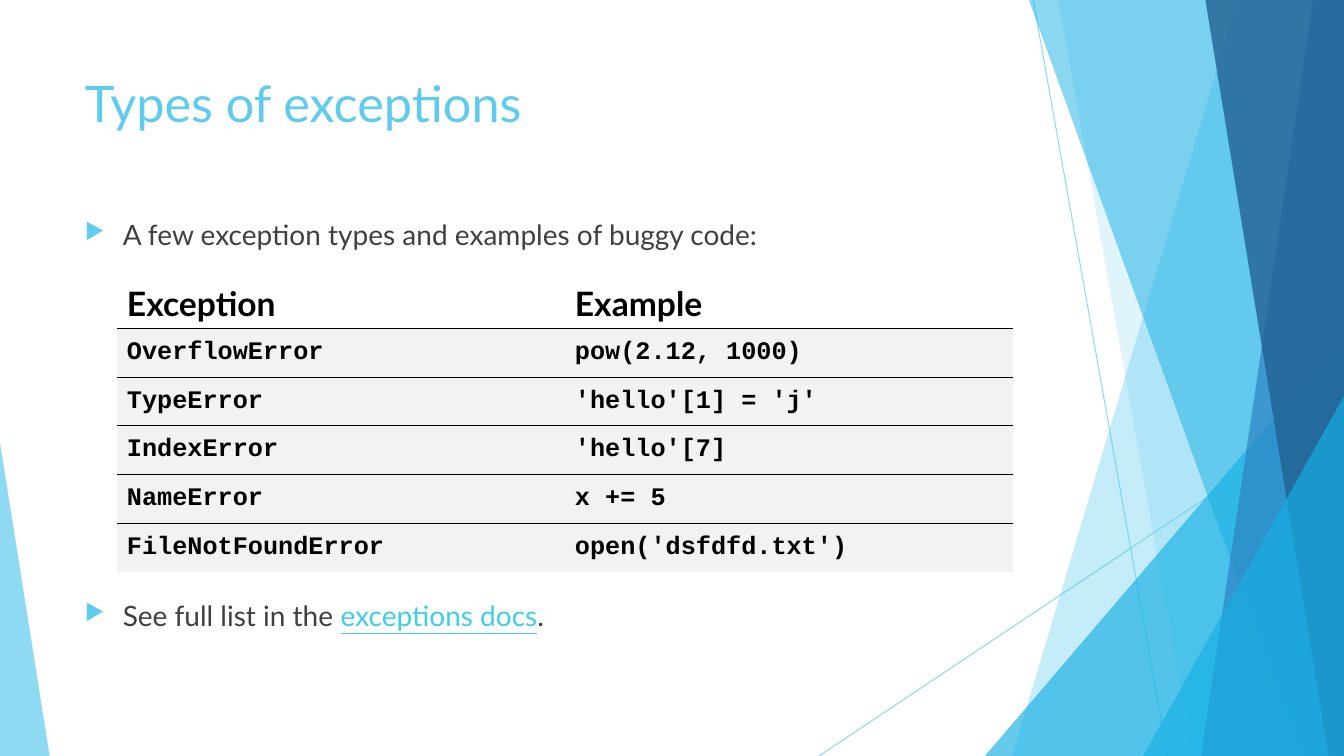
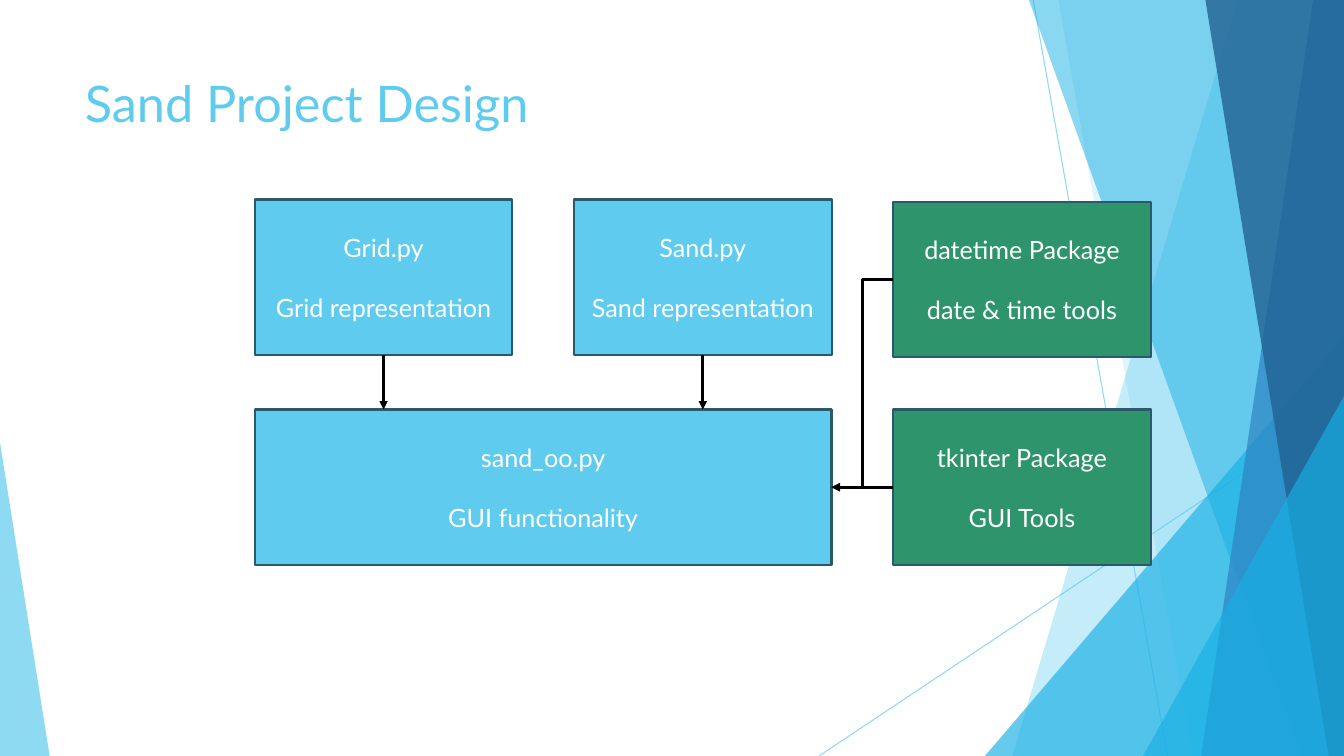
from lxml import etree
from pptx import Presentation
from pptx import util as u
from pptx.dml.color import RGBColor
from pptx.enum import shapes, text
from pptx.oxml import parse_xml
from pptx.oxml.ns import nsdecls, qn

SKY = RGBColor(0x5F, 0xCB, 0xEF)
CYAN = RGBColor(0x17, 0xB0, 0xE4)
BLUE = RGBColor(0x2E, 0x83, 0xC3)
NAVY = RGBColor(0x22, 0x62, 0x92)
GREEN = RGBColor(0x2E, 0x94, 0x6B)
OUTLINE = RGBColor(0x2A, 0x59, 0x69)
LINK = RGBColor(0x3F, 0xCD, 0xE7)
GRAY = RGBColor(0x40, 0x40, 0x40)
PALE = RGBColor(0xF2, 0xF2, 0xF2)
BLACK = RGBColor(0, 0, 0)
WHITE = RGBColor(0xFF, 0xFF, 0xFF)

FONT = "Lato"
CODE_FONT = "Courier New"
WIDTH, HEIGHT = 960, 540
PLAIN_TABLE = "{2D5ABB26-0587-4C30-8999-92F81FD0307C}"

BOX_WIDTH, BOX_HEIGHT = 184, 111
BOX_LEFT, BOX_PITCH = 182, 228
UPPER_TOP, PACKAGE_TOP, LOWER_TOP = 142.5, 144, 292.5

EXCEPTIONS = [
    ("Exception", "Example"),
    ("OverflowError", "pow(2.12, 1000)"),
    ("TypeError", "'hello'[1] = 'j'"),
    ("IndexError", "'hello'[7]"),
    ("NameError", "x += 5"),
    ("FileNotFoundError", "open('dsfdfd.txt')"),
]


def points(*values):
    return [u.Pt(value) for value in values]


def set_opacity(shape, percent):
    color = next(shape.element.iter(qn("a:srgbClr")))
    etree.SubElement(color, qn("a:alpha"), val=str(percent * 1000))


def add_facet(shape, color, opacity):
    shape.shadow.inherit = False
    shape.fill.solid()
    shape.fill.fore_color.rgb = color
    shape.line.fill.background()
    set_opacity(shape, opacity)


def add_band(slide, top_x, bottom_x, color, opacity):
    builder = slide.shapes.build_freeform(*points(top_x, 0), scale=1.0)
    corners = [(WIDTH, 0), (WIDTH, HEIGHT), (bottom_x, HEIGHT)]
    builder.add_line_segments([points(*corner) for corner in corners], close=True)
    add_facet(builder.convert_to_shape(), color, opacity)


def add_triangle(slide, left, top, width, peak, color, opacity):
    shape = slide.shapes.add_shape(
        shapes.MSO_SHAPE.ISOSCELES_TRIANGLE, *points(left, top, width, HEIGHT - top))
    shape.adjustments[0] = peak
    add_facet(shape, color, opacity)


def add_line(slide, start, end, color, width, kind=shapes.MSO_CONNECTOR.STRAIGHT):
    connector = slide.shapes.add_connector(kind, *points(*start, *end))
    connector.line.color.rgb = color
    connector.line.width = u.Pt(width)
    etree.SubElement(connector.element.spPr, qn("a:effectLst"))
    return connector


def draw_background(slide):
    for start, end in [((738, 0), (834, HEIGHT)), ((WIDTH, 290), (585, HEIGHT))]:
        set_opacity(add_line(slide, start, end, SKY, 0.75), 70)
    add_band(slide, 884, 723, SKY, 36)
    add_band(slide, 756, 852, SKY, 20)
    add_triangle(slide, 703.5, 240, 256.5, 1, CYAN, 66)
    add_band(slide, 735, 929.5, CYAN, 50)
    add_band(slide, 938, 858, BLUE, 70)
    add_band(slide, 861, 949, NAVY, 80)
    add_triangle(slide, 816.5, 283, 143.5, 1, CYAN, 66)
    add_triangle(slide, 0, 316, 35.5, 0, SKY, 70)


def move_to_master(slide, master):
    tree = master.shapes.element
    artwork = [shape.element for shape in slide.shapes if not shape.is_placeholder]
    for position, element in enumerate(artwork, 2):
        tree.insert(position, element)
    for number, properties in enumerate(tree.iter(qn("p:cNvPr")), 1):
        properties.set("id", str(number))


def set_text_style(master, style, size, color, indent, space_before, bullet):
    old = next(master.element.iter(qn(style))).find(qn("a:lvl1pPr"))
    new = parse_xml(
        f'<a:lvl1pPr {nsdecls("a")} algn="l" marL="{u.Pt(indent)}" indent="{u.Pt(-indent)}">'
        f'<a:spcBef><a:spcPts val="{space_before * 100}"/></a:spcBef>{bullet}'
        f'<a:defRPr sz="{size * 100}"><a:solidFill><a:srgbClr val="{color}"/></a:solidFill>'
        f'<a:latin typeface="{FONT}"/></a:defRPr></a:lvl1pPr>')
    old.getparent().replace(old, new)


def style_master(master):
    kinds = shapes.PP_PLACEHOLDER
    for kind, top, height in [(kinds.TITLE, 48, 104), (kinds.BODY, 152, 324)]:
        placeholder = master.placeholders.get(kind)
        placeholder.left, placeholder.top, placeholder.width, placeholder.height = points(
            53.5, top, 677, height)
        placeholder.text_frame.vertical_anchor = text.MSO_ANCHOR.TOP
        placeholder.text_frame.auto_size = text.MSO_AUTO_SIZE.NONE
    bullet = (f'<a:buClr><a:srgbClr val="{SKY}"/></a:buClr><a:buSzPct val="80000"/>'
              '<a:buChar char="▶"/>')
    set_text_style(master, "p:titleStyle", 36, SKY, 0, 0, "<a:buNone/>")
    set_text_style(master, "p:bodyStyle", 20, GRAY, 27, 10, bullet)


def add_run(paragraph, words, font=None, size=None, color=None, bold=None):
    run = paragraph.add_run()
    run.text = words
    if font:
        run.font.name = font
    if size:
        run.font.size = u.Pt(size)
    if color is not None:
        run.font.color.rgb = color
    run.font.bold = bold
    return run


def add_titled_slide(presentation, layout_index, title):
    slide = presentation.slides.add_slide(presentation.slide_layouts[layout_index])
    add_run(slide.shapes.title.text_frame.paragraphs[0], title)
    return slide


def set_bottom_border(cell):
    border = parse_xml(
        f'<a:lnB {nsdecls("a")} w="{u.Pt(1)}"><a:solidFill><a:srgbClr val="{BLACK}"/>'
        '</a:solidFill></a:lnB>')
    cell._tc.get_or_add_tcPr().insert(0, border)


def fill_cell(cell, words, is_header, is_last):
    if is_header:
        cell.fill.background()
        add_run(cell.text_frame.paragraphs[0], words, FONT, 24, BLACK, True)
    else:
        cell.fill.solid()
        cell.fill.fore_color.rgb = PALE
        cell.margin_top = cell.margin_bottom = u.Pt(7.2)
        add_run(cell.text_frame.paragraphs[0], words, CODE_FONT, 18, BLACK, True)
    if not is_last:
        set_bottom_border(cell)


def add_code_table(slide, rows, left, top, column_width):
    header_height, row_height = 36, 34.8
    height = header_height + row_height * (len(rows) - 1)
    frame = slide.shapes.add_table(
        len(rows), 2, *points(left, top, 2 * column_width, height))
    next(frame.element.iter(qn("a:tableStyleId"))).text = PLAIN_TABLE
    table = frame.table
    table.first_row = table.horz_banding = False
    for row_index, row in enumerate(rows):
        is_header = row_index == 0
        table.rows[row_index].height = u.Pt(header_height if is_header else row_height)
        for column_index, words in enumerate(row):
            fill_cell(table.cell(row_index, column_index), words,
                      is_header, row_index == len(rows) - 1)


def add_box(slide, column, top, color, name, role, columns=1):
    width = BOX_WIDTH + BOX_PITCH * (columns - 1)
    box = slide.shapes.add_shape(
        shapes.MSO_SHAPE.RECTANGLE,
        *points(BOX_LEFT + BOX_PITCH * column, top, width, BOX_HEIGHT))
    box.shadow.inherit = False
    box.fill.solid()
    box.fill.fore_color.rgb = color
    box.line.color.rgb = OUTLINE
    box.line.width = u.Pt(1.5)
    frame = box.text_frame
    frame.word_wrap = True
    frame.vertical_anchor = text.MSO_ANCHOR.MIDDLE
    for paragraph, words in [(frame.paragraphs[0], name), (frame.add_paragraph(), role)]:
        paragraph.alignment = text.PP_ALIGN.CENTER
        add_run(paragraph, words, FONT, 18, WHITE)
    paragraph.space_before = u.Pt(21.6)
    return box


def add_arrow(slide, start, end, kind=shapes.MSO_CONNECTOR.STRAIGHT):
    arrow = add_line(slide, start, end, BLACK, 2, kind)
    etree.SubElement(arrow.line._get_or_add_ln(), qn("a:tailEnd"), type="triangle")
    return arrow


def build_exceptions(slide):
    frame = slide.placeholders[1].text_frame
    add_run(frame.paragraphs[0], "A few exception types and examples of buggy code:")
    reference = frame.add_paragraph()
    reference.space_before = u.Pt(248)
    add_run(reference, "See full list in the ")
    add_run(reference, "exceptions docs", color=LINK).font.underline = True
    add_run(reference, ".")
    add_code_table(slide, EXCEPTIONS, 83.5, 198.5, 320)


def build_design(slide):
    gui = add_box(slide, 0, LOWER_TOP, SKY, "sand_oo.py", "GUI functionality", columns=2)
    modules_used = [("Grid.py", "Grid representation"), ("Sand.py", "Sand representation")]
    for column, (name, role) in enumerate(modules_used):
        box = add_box(slide, column, UPPER_TOP, SKY, name, role)
        center = BOX_LEFT + BOX_PITCH * column + BOX_WIDTH / 2
        arrow = add_arrow(slide, (center, UPPER_TOP + BOX_HEIGHT), (center, LOWER_TOP))
        arrow.begin_connect(box, 2)
    packages = [
        (PACKAGE_TOP, "datetime Package", "date & time tools", shapes.MSO_CONNECTOR.ELBOW),
        (LOWER_TOP, "tkinter Package", "GUI Tools", shapes.MSO_CONNECTOR.STRAIGHT),
    ]
    package_left = BOX_LEFT + 2 * BOX_PITCH
    gui_right = BOX_LEFT + BOX_PITCH + BOX_WIDTH
    for top, name, role, kind in packages:
        box = add_box(slide, 2, top, GREEN, name, role)
        arrow = add_arrow(slide, (package_left, top + BOX_HEIGHT / 2),
                          (gui_right, LOWER_TOP + BOX_HEIGHT / 2), kind)
        arrow.begin_connect(box, 1)
        arrow.end_connect(gui, 3)


def main():
    presentation = Presentation()
    presentation.slide_width, presentation.slide_height = points(WIDTH, HEIGHT)
    master = presentation.slide_master
    style_master(master)
    exceptions = add_titled_slide(presentation, 1, "Types of exceptions")
    draw_background(exceptions)
    move_to_master(exceptions, master)
    build_exceptions(exceptions)
    build_design(add_titled_slide(presentation, 5, "Sand Project Design"))
    presentation.save("out.pptx")


if __name__ == "__main__":
    main()
